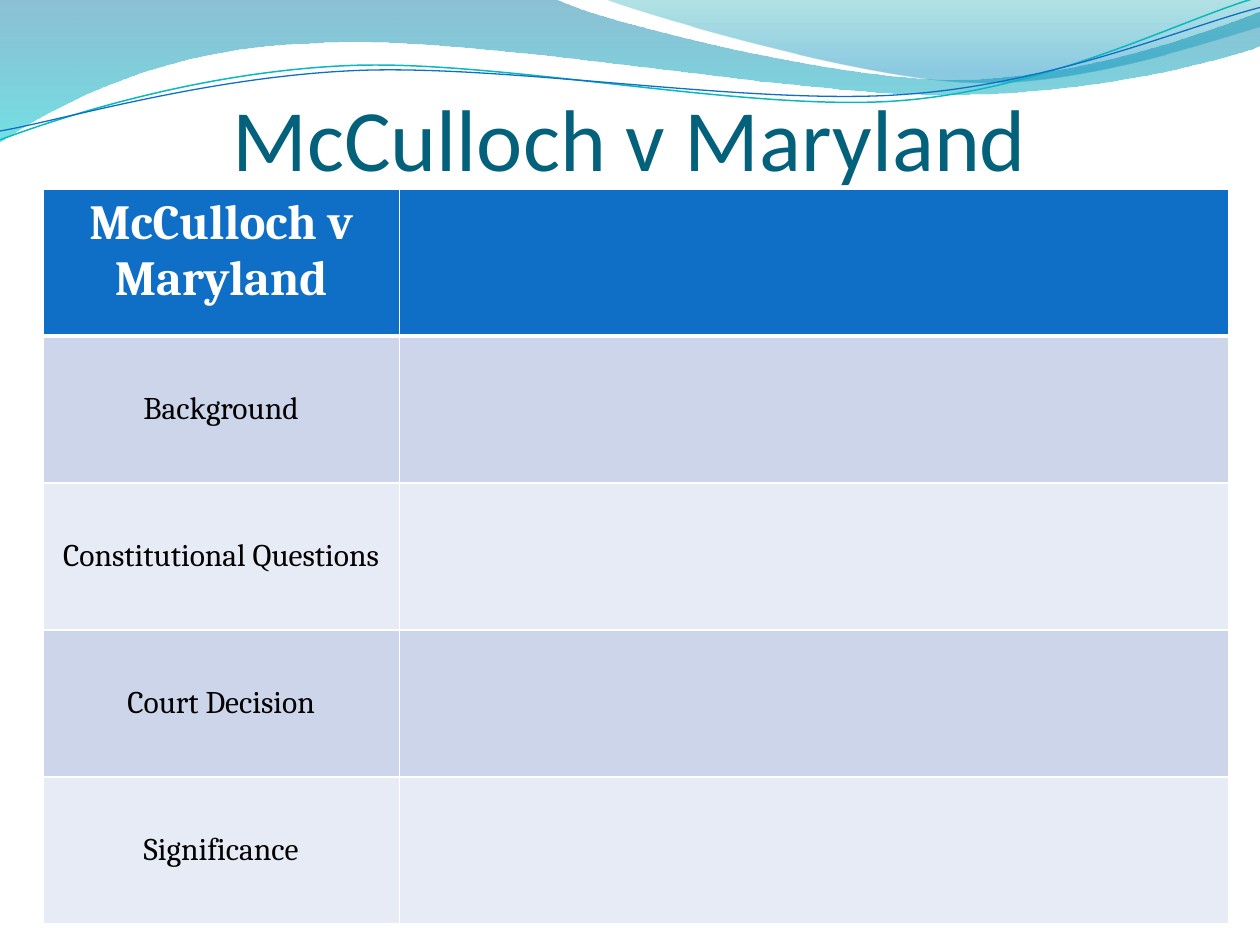
import math
from dataclasses import dataclass
from typing import Optional

import lxml.etree
import pptx
import pptx.dml.color
import pptx.enum.text
import pptx.oxml.ns
import pptx.util

Point = tuple[float, float]

COLORS = {
    "white": "FFFFFF", "black": "000000", "title": "04617B", "header": "0F6FC6",
    "band_dark": "CCD5EA", "band_light": "E7EBF5",
    "deep": "0074A1", "aqua": "00C6CF", "teal": "00A1A9", "sky": "008BBF",
    "line_teal": "0AB8BF", "line_blue": "0F6FC6",
}
COLS, ROWS = 10, 7.5
LINE_TILT = -2.7
ROW_HEIGHT = 7 / 6
LABELS = ["McCulloch v Maryland", "Background", "Constitutional Questions",
          "Court Decision", "Significance"]

prs = pptx.Presentation()
prs.slide_width = pptx.util.Inches(10)
prs.slide_height = pptx.util.Inches(7.5)


@dataclass
class Stop:
    position: float
    color: str
    opacity: int


@dataclass
class Wave:
    start: Point
    segments: list[tuple[Point, ...]]
    stops: tuple[Stop, ...] = ()
    line: Optional[str] = None
    width: float = 0
    center: Point = (0, 0)


WAVES = [
    Wave((0, 0), [
        ((4.4, -0.01),),
        ((4.76, 0.17), (6.64, 0.63), (7.58, 0.63)),
        ((8.53, 0.63), (9.58, 0.26), (10, 0.09)),
        ((10.01, 0.36),),
        ((9.83, 0.44), (8.7, 0.76), (7.46, 0.75)),
        ((6.22, 0.75), (3.82, 0.28), (2.57, 0.34)),
        ((1.29, 0.36), (0.46, 0.83), (-0.01, 1.13)),
        ((0, 0),),
    ], (Stop(0, "deep", 45), Stop(1, "aqua", 55))),
    Wave((4.79, -0.01), [
        ((5.09, 0.11), (6.82, 0.62), (7.69, 0.65)),
        ((8.56, 0.69), (9.61, 0.32), (10, 0.21)),
        ((10, 0),),
        ((4.79, -0.01),),
    ], (Stop(0, "teal", 30), Stop(0.8, "sky", 45))),
    Wave((0, 1.11), [
        ((0.48, 0.93), (1.58, 0.57), (2.77, 0.52)),
        ((3.95, 0.47), (5.93, 0.89), (7.13, 0.8)),
        ((8.33, 0.71), (9.38, 0.15), (9.98, -0.02)),
    ], line="line_teal", width=0.85, center=(4.99, 0.58)),
    Wave((0, 1.04), [
        ((0.47, 0.96), (1.64, 0.61), (2.83, 0.56)),
        ((4.03, 0.51), (5.97, 0.84), (7.17, 0.75)),
        ((8.36, 0.67), (9.41, 0.21), (10, 0.06)),
    ], line="line_blue", width=0.75, center=(5, 0.59)),
]


def x(cols: float) -> int:
    return round(prs.slide_width * cols / COLS)


def y(rows: float) -> int:
    return round(prs.slide_height * rows / ROWS)


def rgb(name: str) -> pptx.dml.color.RGBColor:
    return pptx.dml.color.RGBColor.from_string(COLORS[name])


def add_xml(parent, tag: str, **attributes: str):
    return lxml.etree.SubElement(parent, pptx.oxml.ns.qn(tag), attributes)


def turn(point: Point, center: Point, degrees: float) -> Point:
    a = math.radians(degrees)
    dx, dy = point[0] - center[0], point[1] - center[1]
    return (center[0] + dx * math.cos(a) - dy * math.sin(a),
            center[1] + dx * math.sin(a) + dy * math.cos(a))


def bend(sp, segments: list[tuple[Point, ...]]) -> None:
    lines = iter(list(sp.element.iter(pptx.oxml.ns.qn("a:lnTo"))))
    for segment in segments:
        first, *others = [next(lines) for _ in segment]
        if others:
            first.tag = pptx.oxml.ns.qn("a:cubicBezTo")
        for line in others:
            first.append(line[0])
            line.getparent().remove(line)


def draw_wave(shapes, wave: Wave) -> None:
    tilt = LINE_TILT if wave.line else 0
    points = [wave.start] + [p for segment in wave.segments for p in segment]
    turned = [turn(p, wave.center, -tilt) for p in points]
    first, *rest = [(x(px), y(py)) for px, py in turned]
    builder = shapes.build_freeform(*first)
    builder.add_line_segments(rest, close=bool(wave.stops))
    sp = builder.convert_to_shape()
    bend(sp, wave.segments)
    sp.rotation = tilt
    sp.shadow.inherit = False
    if wave.line:
        sp.fill.background()
        sp.line.color.rgb = rgb(wave.line)
        sp.line.width = pptx.util.Pt(wave.width)
        return
    sp.line.fill.background()
    sp.fill.gradient()
    sp.fill.gradient_angle = 270
    for target, stop in zip(sp.fill.gradient_stops, wave.stops):
        target.position = stop.position
        target.color.rgb = rgb(stop.color)
    tag = pptx.oxml.ns.qn("a:srgbClr")
    for color, stop in zip(sp.element.spPr.iter(tag), wave.stops):
        add_xml(color, "a:alpha", val=str(stop.opacity * 1000))


def draw_borders(cell, top: float, bottom: float) -> None:
    tcPr = cell._tc.get_or_add_tcPr()
    for side, width in zip("LRTB", (1, 1, top, bottom)):
        ln = add_xml(tcPr, f"a:ln{side}", w=str(pptx.util.Pt(width)))
        add_xml(add_xml(ln, "a:solidFill"), "a:srgbClr", val=COLORS["white"])


def draw_table(shapes, labels: list[str]) -> None:
    frame = shapes.add_table(len(labels), 2, x(0.34), y(1.5), x(9.41),
                             y(ROW_HEIGHT * len(labels)))
    table = frame.table
    for column, width in zip(table.columns, (2.83, 6.58)):
        column.width = x(width)
    for i, label in enumerate(labels):
        header = i == 0
        band = "header" if header else "band_dark" if i % 2 else "band_light"
        for cell in table.rows[i].cells:
            draw_borders(cell, 3 if i == 1 else 1, 3 if header else 1)
            cell.fill.solid()
            cell.fill.fore_color.rgb = rgb(band)
        cell = table.cell(i, 0)
        cell.text = label
        if not header:
            cell.vertical_anchor = pptx.enum.text.MSO_ANCHOR.MIDDLE
        style_text(cell.text_frame.paragraphs[0], "Cambria", 28 if header else 18,
                   "white" if header else "black", header)


def style_text(p, font: str, size: float, color: str, bold: bool = False) -> None:
    p.alignment = pptx.enum.text.PP_ALIGN.CENTER
    p.font.name = font
    p.font.size = pptx.util.Pt(size)
    p.font.color.rgb = rgb(color)
    p.font.bold = bold


def draw_title(sp, text: str) -> None:
    sp.left, sp.top, sp.width, sp.height = x(0.5), y(0.58), x(9), y(0.92)
    tf = sp.text_frame
    tf.text = text
    tf.auto_size = pptx.enum.text.MSO_AUTO_SIZE.NONE
    tf.vertical_anchor = pptx.enum.text.MSO_ANCHOR.BOTTOM
    tf.margin_left = tf.margin_right = tf.margin_bottom = 0
    tf.margin_top = pptx.util.Inches(0.05)
    style_text(tf.paragraphs[0], "Calibri", 50, "title")


def main() -> None:
    s = prs.slides.add_slide(prs.slide_layouts[5])
    s.background.fill.solid()
    s.background.fill.fore_color.rgb = rgb("white")
    title = s.shapes.title
    for wave in WAVES:
        draw_wave(s.shapes, wave)
    title.element.getparent().append(title.element)
    draw_title(title, LABELS[0])
    draw_table(s.shapes, LABELS)
    prs.save("out.pptx")


if __name__ == "__main__":
    main()
